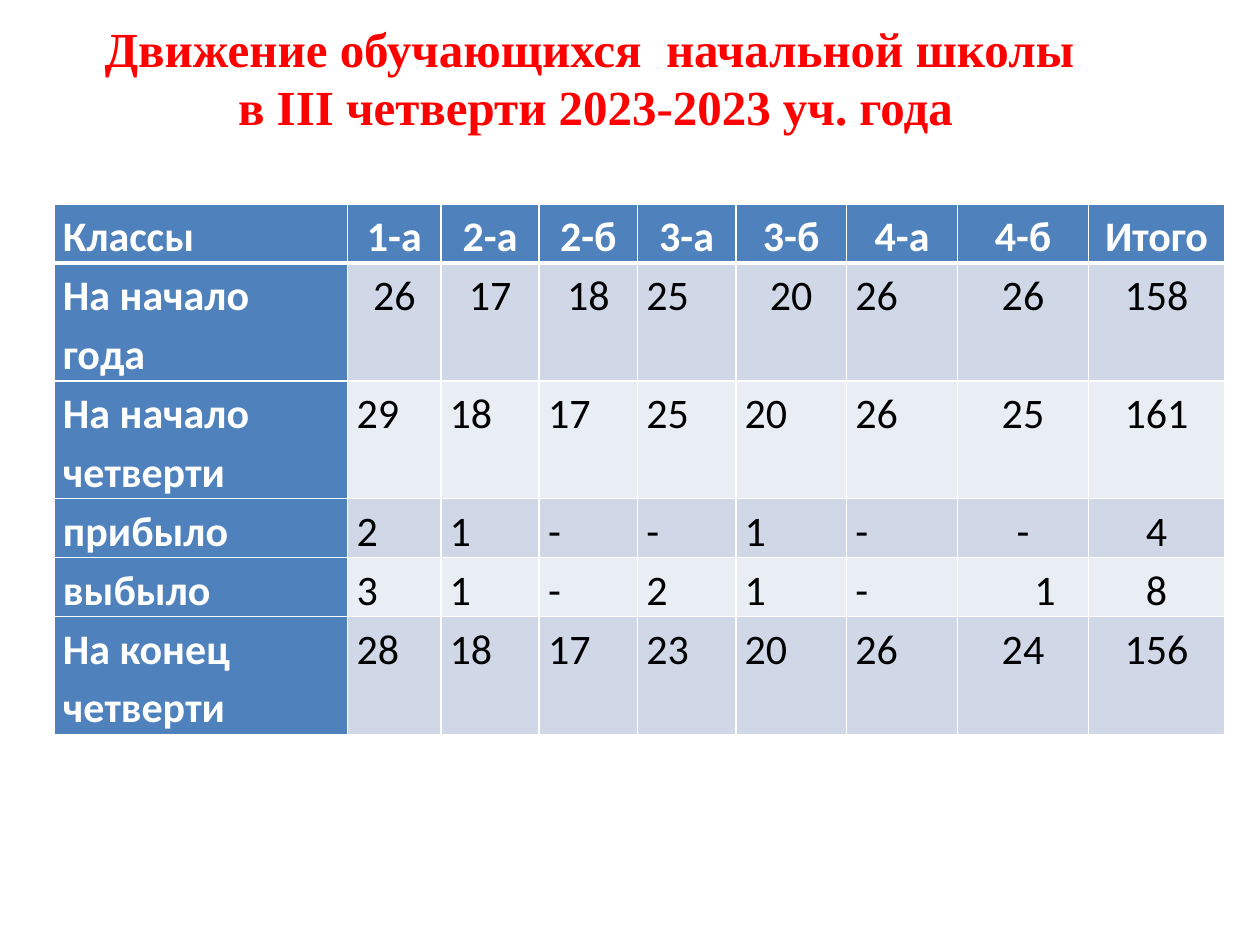
"""Build a slide with a table of pupil movement in a primary school."""
from lxml.etree import SubElement
from pptx import Presentation
from pptx.dml.color import RGBColor as RGB
from pptx.enum.text import MSO_ANCHOR as Anchor, PP_ALIGN as Align
from pptx.oxml.ns import qn
from pptx.util import Inches, Pt

TITLE = ("Движение обучающихся  начальной школы ", "в III четверти 2023-2023 уч. года")
HEADER = ("Классы", "1-а", "2-а", "2-б", "3-а", "3-б", "4-а", "4-б", "Итого")
BODY = [
    ("На начало года", "26", "17", "18", "25", "20", "26", "26", "158"),
    ("На начало четверти", "29", "18", "17", "25", "20", "26", "25", "161"),
    ("прибыло", "2", "1", "-", "-", "1", "-", "-", "4"),
    ("выбыло", "3", "1", "-", "2", "1", "-", "1", "8"),
    ("На конец четверти", "28", "18", "17", "23", "20", "26", "24", "156"),
]
ROWS = [HEADER, *BODY]
ALIGNS = ("lcccccccc", "lccclclcc", "lllllllcc", "lllllllcc", "lllllllic", "lllllllcc")
COL_WIDTHS = (2.33, 0.74, 0.78, 0.78, 0.78, 0.88, 0.88, 1.04, 1.08)
ROW_LINES = (1, 2, 2, 1, 1, 2)
LINE_HEIGHT = 0.46
PADDING = 0.07
INDENT = 0.61

THEME = {
    "title_font": "Times New Roman", "title_size": 28, "title": "FF0000",
    "font": "Calibri", "size": 24, "head": "4F81BD", "head_text": "FFFFFF",
    "bands": ("D0D8E8", "E9EDF4"), "text": "000000",
    "border": "FFFFFF", "thin": 1, "thick": 3,
}


def color(name):
    return RGB.from_string(THEME[name])


def style_font(font, name, size, rgb, bold):
    font.name, font.size, font.bold = name, Pt(size), bold
    font.color.rgb = rgb


def add_title(slide):
    sp = slide.shapes.title
    sp.left, sp.top, sp.width, sp.height = map(Inches, (0.69, 0.09, 8.07, 1.04))
    tf = sp.text_frame
    tf.text = "\n".join(TITLE)
    tf.word_wrap = False
    tf.vertical_anchor = Anchor.MIDDLE
    for p in tf.paragraphs:
        p.alignment = Align.CENTER
        style_font(p.font, THEME["title_font"], THEME["title_size"], color("title"), True)


def add_borders(cell, row):
    tc_pr = cell._tc.get_or_add_tcPr()
    thick_sides = {0: "B", 1: "T"}
    for side in "LRTB":
        width = THEME["thick" if thick_sides.get(row) == side else "thin"]
        ln = SubElement(tc_pr, qn(f"a:ln{side}"), w=str(Pt(width)))
        fill = SubElement(ln, qn("a:solidFill"))
        SubElement(fill, qn("a:srgbClr"), val=THEME["border"])


def fill_cell(cell, text, row, col, align):
    is_head = row == 0 or col == 0
    cell.text = text
    cell.margin_left = Inches(INDENT if align == "i" else PADDING)
    cell.margin_right = Inches(PADDING)
    cell.margin_top = cell.margin_bottom = 0
    p = cell.text_frame.paragraphs[0]
    p.alignment = Align.CENTER if align == "c" else Align.LEFT
    p.line_spacing = 1.15
    style_font(p.font, THEME["font"], THEME["size"],
               color("head_text" if is_head else "text"), is_head)
    add_borders(cell, row)
    cell.fill.solid()
    band = THEME["head"] if is_head else THEME["bands"][(row - 1) % 2]
    cell.fill.fore_color.rgb = RGB.from_string(band)


def add_movement_table(slide):
    height = sum(ROW_LINES) * LINE_HEIGHT
    table = slide.shapes.add_table(
        len(ROWS), len(HEADER), Inches(0.43), Inches(1.62),
        Inches(sum(COL_WIDTHS)), Inches(height)).table
    for column, width in zip(table.columns, COL_WIDTHS):
        column.width = Inches(width)
    for i, (texts, aligns) in enumerate(zip(ROWS, ALIGNS)):
        table.rows[i].height = Inches(ROW_LINES[i] * LINE_HEIGHT)
        for j, (text, align) in enumerate(zip(texts, aligns)):
            fill_cell(table.cell(i, j), text, i, j, align)


def main():
    prs = Presentation()
    prs.slide_width, prs.slide_height = Inches(10), Inches(7.5)
    slide = prs.slides.add_slide(prs.slide_layouts[5])
    add_title(slide)
    add_movement_table(slide)
    prs.save("out.pptx")


if __name__ == "__main__":
    main()
